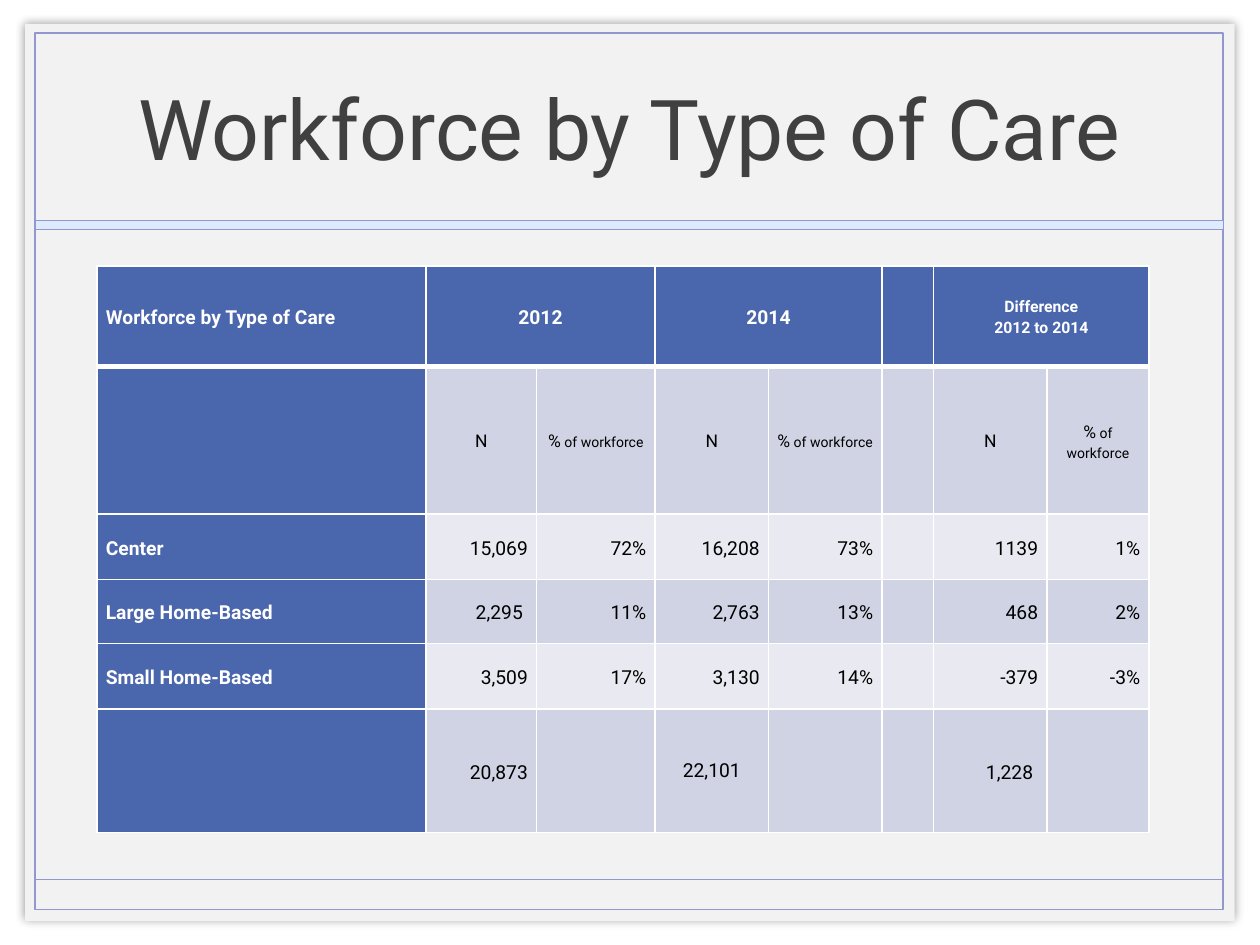
from lxml.etree import SubElement
from pptx import Presentation
from pptx.dml.color import RGBColor
from pptx.enum.shapes import MSO_CONNECTOR, MSO_SHAPE
from pptx.enum.text import MSO_ANCHOR, PP_ALIGN
from pptx.oxml.ns import qn
from pptx.util import Inches, Pt

LEFT, CENTER, RIGHT = PP_ALIGN.LEFT, PP_ALIGN.CENTER, PP_ALIGN.RIGHT


def color(hex_string):
    return RGBColor.from_string(hex_string)


def write_text(paragraph, text, size=11, font_color="000000", bold=False,
               align=LEFT, spacing=1.15):
    """Add one formatted run to a paragraph."""
    paragraph.alignment = align
    paragraph.line_spacing = spacing
    run = paragraph.add_run()
    run.text = text
    run.font.name = "Roboto"
    run.font.size = Pt(size)
    run.font.bold = bold
    run.font.color.rgb = color(font_color)


class SlideBuilder:
    paper, frame, band = "F2F2F2", "9297CF", "DEEAFD"
    header, dark_row, light_row = "4A66AC", "D0D3E3", "E9EAF1"
    white, title_color = "FFFFFF", "404040"

    def __init__(self, slide):
        self.slide = slide

    def rectangle(self, left, top, width, height, fill=None, line=None,
                  line_width=1.0, shadow=False):
        shape = self.slide.shapes.add_shape(
            MSO_SHAPE.RECTANGLE, Inches(left), Inches(top), Inches(width), Inches(height))
        if fill:
            shape.fill.solid()
            shape.fill.fore_color.rgb = color(fill)
        else:
            shape.fill.background()
        if line:
            shape.line.color.rgb = color(line)
            shape.line.width = Pt(line_width)
        else:
            shape.line.fill.background()
        shape.shadow.inherit = False
        if shadow:
            effects = shape.element.spPr.find(qn("a:effectLst"))
            outer = SubElement(effects, qn("a:outerShdw"), blurRad=str(Pt(5)), dist="0")
            tint = SubElement(outer, qn("a:srgbClr"), val="000000")
            SubElement(tint, qn("a:alpha"), val="40000")

    def rule(self, left, right, top):
        connector = self.slide.shapes.add_connector(
            MSO_CONNECTOR.STRAIGHT, Inches(left), Inches(top), Inches(right), Inches(top))
        connector.line.color.rgb = color(self.frame)
        connector.line.width = Pt(1)
        SubElement(connector.element.spPr, qn("a:effectLst"))

    def title(self, text, left, top, width, height):
        text_frame = self.slide.shapes.add_textbox(
            Inches(left), Inches(top), Inches(width), Inches(height)).text_frame
        text_frame.word_wrap = True
        text_frame.vertical_anchor = MSO_ANCHOR.MIDDLE
        write_text(text_frame.paragraphs[0], text, size=48,
                   font_color=self.title_color, align=CENTER, spacing=1.0)

    def table(self, left, top, widths, heights):
        table = self.slide.shapes.add_table(
            len(heights), len(widths), Inches(left), Inches(top),
            Inches(sum(widths)), Inches(sum(heights))).table
        for column, width in zip(table.columns, widths):
            column.width = Inches(width)
        for row, height in zip(table.rows, heights):
            row.height = Inches(height)
        for row in range(len(heights)):
            for column in range(len(widths)):
                self.style_cell(table.cell(row, column), row, column)
        return table

    def style_cell(self, cell, row, column):
        cell.vertical_anchor = MSO_ANCHOR.MIDDLE
        cell.margin_left = cell.margin_right = Inches(0.07)
        cell.margin_top = cell.margin_bottom = 0
        # The edge between header and body is thicker
        edges = {"a:lnL": 1, "a:lnR": 1, "a:lnT": 3 if row == 1 else 1,
                 "a:lnB": 3 if row == 0 else 1}
        properties = cell._tc.get_or_add_tcPr()
        for tag, width in edges.items():
            edge = SubElement(properties, qn(tag), w=str(Pt(width)))
            solid = SubElement(edge, qn("a:solidFill"))
            SubElement(solid, qn("a:srgbClr"), val=self.white)
        cell.fill.solid()
        if row == 0 or column == 0:
            fill = self.header
        else:
            fill = self.dark_row if row % 2 else self.light_row
        # The totals row is dark like the row of column labels
        if row == 5 and column:
            fill = self.dark_row
        cell.fill.fore_color.rgb = color(fill)


def main():
    presentation = Presentation()
    presentation.slide_width, presentation.slide_height = Inches(10), Inches(7.5)
    builder = SlideBuilder(presentation.slides.add_slide(presentation.slide_layouts[6]))

    # Card, frame and dividers
    builder.rectangle(0.2, 0.19, 9.6, 7.12, fill=builder.paper, shadow=True)
    builder.rectangle(0.28, 0.26, 9.43, 6.96, line=builder.frame)
    builder.rule(0.28, 9.71, 6.98)
    builder.rectangle(0.28, 1.75, 9.43, 0.07, fill=builder.band,
                      line=builder.frame, line_width=0.25)
    builder.title("Workforce by Type of Care", 0.98, 0.27, 8.03, 1.47)

    # Table grid
    table = builder.table(0.77, 2.11, [2.61, 0.88, 0.94, 0.9, 0.9, 0.41, 0.9, 0.81],
                          [0.8, 1.17, 0.52, 0.51, 0.52, 0.98])

    # Header: each group spans a count column and a share column
    heading = {"font_color": builder.white, "bold": True}
    write_text(table.cell(0, 0).text_frame.paragraphs[0], "Workforce by Type of Care", **heading)
    groups = [(1, ["2012"], 11), (3, ["2014"], 11), (6, ["Difference", "2012 to 2014"], 9)]
    for column, lines, size in groups:
        cell = table.cell(0, column)
        cell.merge(table.cell(0, column + 1))
        for index, line in enumerate(lines):
            text_frame = cell.text_frame
            paragraph = text_frame.add_paragraph() if index else text_frame.paragraphs[0]
            write_text(paragraph, line, size=size, align=CENTER, **heading)
        count_label = table.cell(1, column).text_frame.paragraphs[0]
        write_text(count_label, "N", size=10, align=CENTER)
        share_label = table.cell(1, column + 1).text_frame.paragraphs[0]
        write_text(share_label, "%", size=10, align=CENTER)
        write_text(share_label, " of workforce", size=8, align=CENTER)

    # Body and totals
    body = [
        ["Center", "15,069", "72%", "16,208", "73%", "", "1139", "1%"],
        ["Large Home-Based", "2,295", "11%", "2,763", "13%", "", "468", "2%"],
        ["Small Home-Based", "3,509", "17%", "3,130", "14%", "", "-379", "-3%"],
        ["", "20,873", "", "22,101", "", "", "1,228", ""],
    ]
    for row, values in enumerate(body, start=2):
        for column, value in enumerate(values):
            if not value:
                continue
            paragraph = table.cell(row, column).text_frame.paragraphs[0]
            if column == 0:
                write_text(paragraph, value, **heading)
            elif value == "22,101":
                write_text(paragraph, value, align=CENTER, spacing=1.0)
            else:
                write_text(paragraph, value, align=RIGHT)

    # Two values sit slightly further from the right edge
    for row, column in [(3, 1), (5, 6)]:
        table.cell(row, column).margin_right = Inches(0.11)

    presentation.save("out.pptx")


if __name__ == "__main__":
    main()
